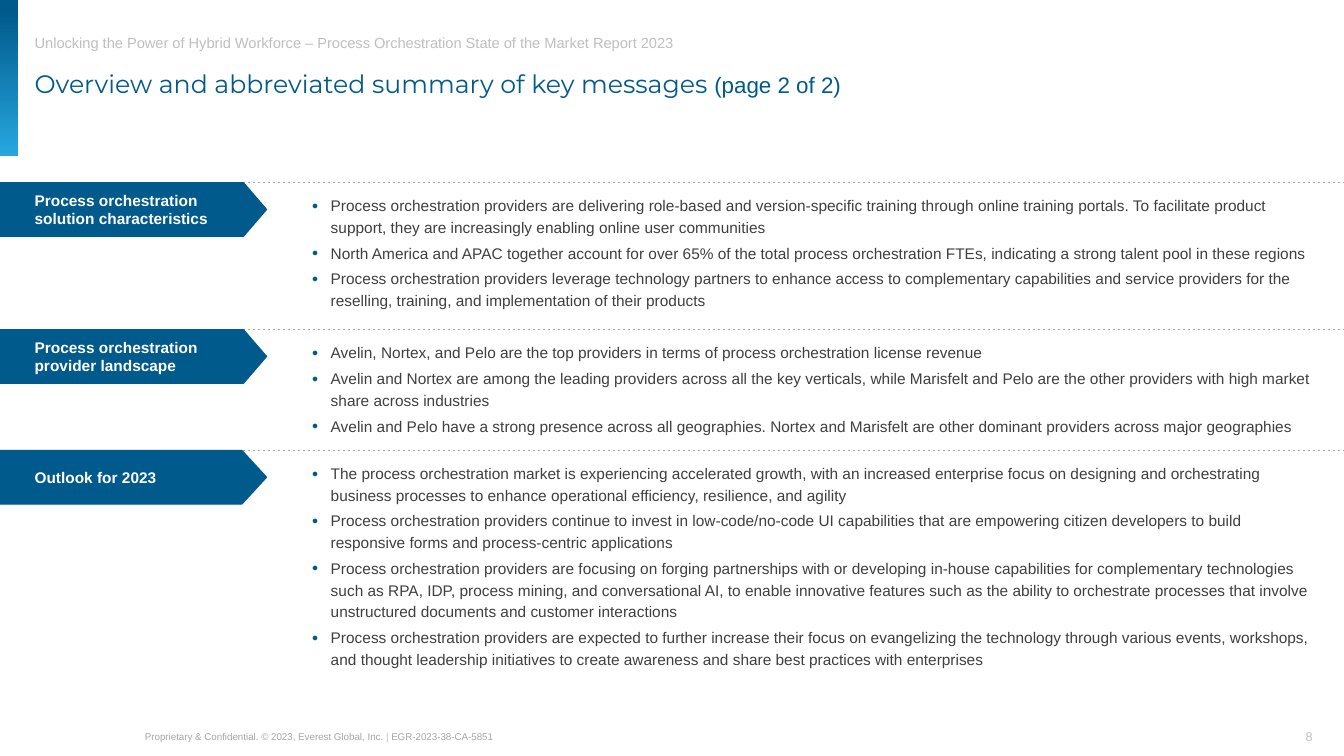
from dataclasses import dataclass

from lxml import etree
from pptx import Presentation
from pptx import util as u
from pptx.dml.color import RGBColor
from pptx.enum import dml, shapes, text
from pptx.oxml import ns

PX = 9525  # EMU in one px (96 px to the inch)
WIDTH, HEIGHT = 1280, 720


@dataclass(frozen=True)
class Theme:
    navy: str = "005A8C"
    sky: str = "27A7DF"
    ink: str = "3F3F3F"
    grey: str = "A6A6A6"
    pale: str = "BFBFBF"
    white: str = "FFFFFF"
    body_font: str = "Arial"
    title_font: str = "Montserrat"
    title: float = 18
    subtitle: float = 16
    body: float = 11
    header: float = 10.5
    page: float = 9
    footer: float = 7


def px(*values):
    return [u.Emu(v * PX) for v in values]


def rgb(value):
    return RGBColor.from_string(value)


def apply(target, values):
    for name, value in values.items():
        setattr(target, name, value)


class Deck:
    def __init__(self, theme):
        self.theme = theme
        self.prs = Presentation()
        self.prs.slide_width, self.prs.slide_height = px(WIDTH, HEIGHT)
        self.s = self.prs.slides.add_slide(self.prs.slide_layouts[6])

    def frame(self, sp, insets=(0, 0, 0, 0), anchor=text.MSO_ANCHOR.TOP):
        left, top, right, bottom = px(*insets)
        tf = sp.text_frame
        apply(tf, dict(word_wrap=True, vertical_anchor=anchor,
                       margin_left=left, margin_top=top,
                       margin_right=right, margin_bottom=bottom))
        return tf

    def run(self, p, words, size, color, font=None, bold=False):
        r = p.add_run()
        r.text = words
        apply(r.font, dict(size=u.Pt(size), bold=bold,
                           name=font or self.theme.body_font))
        r.font.color.rgb = rgb(color)

    def label(self, box, runs, align=text.PP_ALIGN.LEFT,
              anchor=text.MSO_ANCHOR.TOP):
        tf = self.frame(self.s.shapes.add_textbox(*px(*box)), anchor=anchor)
        p = tf.paragraphs[0]
        p.alignment = align
        for r in runs:
            self.run(p, *r)

    def bullets(self, box, items):
        tf = self.frame(self.s.shapes.add_textbox(*px(*box)))
        for i, item in enumerate(items):
            p = tf.add_paragraph() if i else tf.paragraphs[0]
            self.bullet(p)
            apply(p, dict(line_spacing=1.17, space_after=u.Pt(3)))
            self.run(p, item, self.theme.body, self.theme.ink)

    def bullet(self, p, indent=18):
        pPr = p._p.get_or_add_pPr()
        pPr.set("marL", str(indent * PX))
        pPr.set("indent", str(-indent * PX))
        color = etree.SubElement(pPr, ns.qn("a:buClr"))
        etree.SubElement(color, ns.qn("a:srgbClr"), val=self.theme.navy)
        etree.SubElement(pPr, ns.qn("a:buSzPct"), val="70000")
        etree.SubElement(pPr, ns.qn("a:buFont"), typeface=self.theme.body_font)
        etree.SubElement(pPr, ns.qn("a:buChar"), char="●")

    def gradient_bar(self, box):
        sp = self.s.shapes.add_shape(shapes.MSO_SHAPE.RECTANGLE, *px(*box))
        sp.shadow.inherit = False
        sp.line.fill.background()
        sp.fill.gradient()
        sp.fill.gradient_angle = 270
        stops = ((0.07, self.theme.navy), (1, self.theme.sky))
        for stop, (position, color) in zip(sp.fill.gradient_stops, stops):
            stop.position = position
            stop.color.rgb = rgb(color)

    def dashed_rule(self, left, right, y):
        line = self.s.shapes.add_connector(
            shapes.MSO_CONNECTOR.STRAIGHT, *px(left, y, right, y))
        etree.SubElement(line._element.spPr, ns.qn("a:effectLst"))
        line.line.color.rgb = rgb(self.theme.grey)
        apply(line.line, dict(width=u.Pt(0.5),
                              dash_style=dml.MSO_LINE.DASH))

    def arrow_tag(self, box, words, point):
        sp = self.s.shapes.add_shape(shapes.MSO_SHAPE.PENTAGON, *px(*box))
        sp.shadow.inherit = False
        sp.adjustments[0] = point
        sp.fill.solid()
        sp.fill.fore_color.rgb = rgb(self.theme.navy)
        sp.line.color.rgb = rgb(self.theme.navy)
        sp.line.width = u.Pt(0.75)
        tf = self.frame(sp, (33, 5, 5, 5), text.MSO_ANCHOR.MIDDLE)
        p = tf.paragraphs[0]
        p.alignment = text.PP_ALIGN.LEFT
        self.run(p, words, self.theme.body, self.theme.white, bold=True)


# Section: rule y, body height, arrow point, heading, messages
SECTIONS = [
    (174, 110, 0.43, "Process orchestration solution characteristics", [
        "Process orchestration providers are delivering role-based and version-specific training through online training portals. To facilitate product support, they are increasingly enabling online user communities",
        "North America and APAC together account for over 65% of the total process orchestration FTEs, indicating a strong talent pool in these regions",
        "Process orchestration providers leverage technology partners to enhance access to complementary capabilities and service providers for the reselling, training, and implementation of their products",
    ]),
    (314, 114, 0.43, "Process orchestration provider landscape", [
        "Avelin, Nortex, and Pelo are the top providers in terms of process orchestration license revenue",
        "Avelin and Nortex are among the leading providers across all the key verticals, while Marisfelt and Pelo are the other providers with high market share across industries",
        "Avelin and Pelo have a strong presence across all geographies. Nortex and Marisfelt are other dominant providers across major geographies",
    ]),
    (429, 198, 0.46, "Outlook for 2023", [
        "The process orchestration market is experiencing accelerated growth, with an increased enterprise focus on designing and orchestrating business processes to enhance operational efficiency, resilience, and agility",
        "Process orchestration providers continue to invest in low-code/no-code UI capabilities that are empowering citizen developers to build responsive forms and process-centric applications",
        "Process orchestration providers are focusing on forging partnerships with or developing in-house capabilities for complementary technologies such as RPA, IDP, process mining, and conversational AI, to enable innovative features such as the ability to orchestrate processes that involve unstructured documents and customer interactions",
        "Process orchestration providers are expected to further increase their focus on evangelizing the technology through various events, workshops, and thought leadership initiatives to create awareness and share best practices with enterprises",
    ]),
]


def main():
    t = Theme()
    deck = Deck(t)

    # Header and title
    deck.gradient_bar((0, 0, 17, 149))
    deck.label((33, 32, 1219, 17), [
        ("Unlocking the Power of Hybrid Workforce – Process Orchestration State of the Market Report 2023", t.header, t.pale)])
    deck.label((33, 65, 1217, 29), [
        ("Overview and abbreviated summary of key messages ", t.title, t.navy, t.title_font),
        ("(page 2 of 2)", t.subtitle, t.navy)])

    # Sections
    for y, height, point, heading, messages in SECTIONS:
        deck.dashed_rule(31, WIDTH, y)
        deck.arrow_tag((0, y, 254, 51), heading, point)
        deck.bullets((297, y + 10, 953, height), messages)

    # Footer
    deck.label((138, 693, 454, 17), [
        ("Proprietary & Confidential. © 2023, Everest Global, Inc. ", t.footer, t.grey),
        ("| ", t.footer, t.pale),
        ("EGR-2023-38-CA-5851", t.footer, t.grey)],
        anchor=text.MSO_ANCHOR.MIDDLE)
    deck.label((951, 694, 299, 15), [("8", t.page, t.pale)],
               align=text.PP_ALIGN.RIGHT)

    deck.prs.save("out.pptx")


if __name__ == "__main__":
    main()
